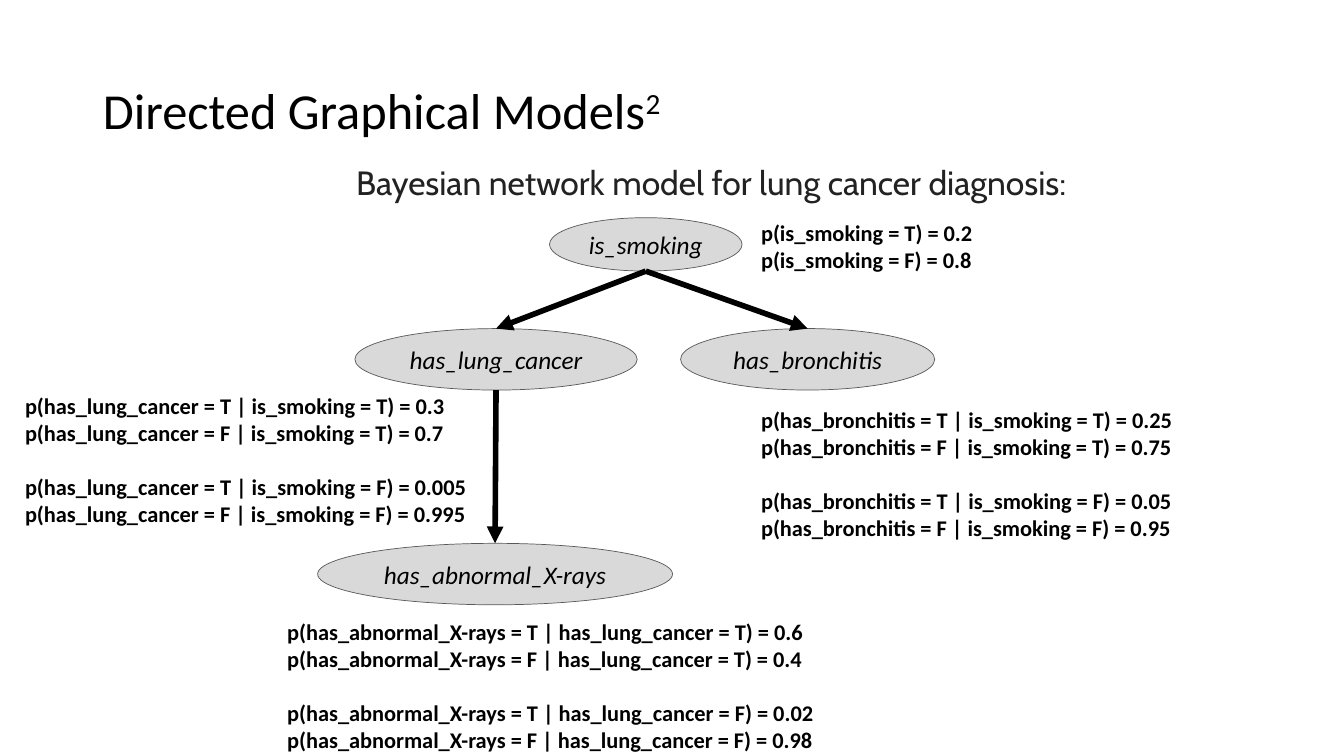
from lxml import etree
from pptx import Presentation, util as u
from pptx.dml.color import RGBColor
from pptx.enum import shapes, text
from pptx.oxml.ns import qn


def paint(code):
    return RGBColor.from_string(code)


def write(para, words, size, font="Calibri", color="000000", bold=False, italic=False, raised=0):
    run = para.add_run()
    run.text = words
    style = run.font
    style.name, style.size = font, u.Pt(size)
    style.bold, style.italic = bold, italic
    style.color.rgb = paint(color)
    if raised:
        run._r.get_or_add_rPr().set("baseline", str(raised * 1000))


class Board:
    fill, edge, ink = "D9D9D9", "595959", "000000"

    def __init__(self, deck):
        self.slide = deck.slides.add_slide(deck.slide_layouts[1])
        self.shapes = self.slide.shapes

    def place(self, holder, left, top, width, height, anchor):
        holder.left, holder.top = u.Inches(left), u.Inches(top)
        holder.width, holder.height = u.Inches(width), u.Inches(height)
        frame = holder.text_frame
        frame.word_wrap = True
        frame.auto_size = text.MSO_AUTO_SIZE.NONE
        frame.vertical_anchor = anchor
        para = frame.paragraphs[0]
        para.line_spacing = 0.9
        return para

    def title(self, words, note):
        para = self.place(self.shapes.title, 0.92, 0.4, 11.5, 1.45, text.MSO_ANCHOR.MIDDLE)
        para.alignment = text.PP_ALIGN.LEFT
        write(para, words, 36)
        write(para, note, 36, raised=30)

    def body(self, words):
        para = self.place(self.slide.placeholders[1], 0.92, 1.6, 11.77, 5.5, text.MSO_ANCHOR.TOP)
        para.level = 1
        para.alignment = text.PP_ALIGN.CENTER
        para.space_before = u.Pt(5)
        props = para._p.get_or_add_pPr()
        props.set("marL", str(u.Inches(0.5)))
        props.set("indent", "0")
        etree.SubElement(props, qn("a:buNone"))
        write(para, words, 24, font="Cabin", color="222222")

    def node(self, name, left, top, width, height):
        oval = self.shapes.add_shape(
            shapes.MSO_SHAPE.OVAL, u.Inches(left), u.Inches(top), u.Inches(width), u.Inches(height))
        oval.shadow.inherit = False
        oval.fill.solid()
        oval.fill.fore_color.rgb = paint(self.fill)
        oval.line.color.rgb = paint(self.edge)
        oval.line.width = u.Pt(0.5)
        frame = oval.text_frame
        frame.word_wrap = False
        frame.vertical_anchor = text.MSO_ANCHOR.MIDDLE
        para = frame.paragraphs[0]
        para.alignment = text.PP_ALIGN.CENTER
        write(para, name, 18, italic=True)
        return oval

    def arrow(self, start, end):
        line = self.shapes.add_connector(
            shapes.MSO_CONNECTOR.STRAIGHT,
            start.left + start.width // 2, start.top + start.height,
            end.left + end.width // 2, end.top)
        line.line.color.rgb = paint(self.ink)
        line.line.width = u.Pt(4)
        props = line._element.spPr
        etree.SubElement(props.find(qn("a:ln")), qn("a:tailEnd"), type="triangle")
        etree.SubElement(props, qn("a:effectLst"))

    def odds(self, left, top, width, height, groups):
        box = self.shapes.add_textbox(u.Inches(left), u.Inches(top), u.Inches(width), u.Inches(height))
        frame = box.text_frame
        frame.word_wrap = True
        for i, group in enumerate(groups):
            for j, words in enumerate(group):
                para = frame.paragraphs[0] if i == j == 0 else frame.add_paragraph()
                if i and j == 0:
                    para.space_before = u.Pt(19.5)
                write(para, words, 16, bold=True)


def table(name, cause, *pairs):
    groups = []
    for state, pair in zip("TF", pairs):
        given = f" | {cause} = {state}" if cause else ""
        groups.append([f"p({name} = {value}{given}) = {odd}" for value, odd in zip("TF", pair)])
    return groups


def main():
    deck = Presentation()
    deck.slide_width, deck.slide_height = u.Inches(13.33), u.Inches(7.5)
    board = Board(deck)
    board.title("Directed Graphical Models", "2")
    board.body("Bayesian network model for lung cancer diagnosis:")

    smoke, lung, bronch, xray = "is_smoking", "has_lung_cancer", "has_bronchitis", "has_abnormal_X-rays"
    spots = {
        smoke: (5.45, 2.16, 1.91, 0.53),
        lung: (3.52, 3.26, 2.8, 0.61),
        bronch: (6.75, 3.26, 2.52, 0.61),
        xray: (3.15, 5.39, 3.52, 0.61),
    }
    nodes = {name: board.node(name, *spot) for name, spot in spots.items()}
    for cause, effect in ((smoke, lung), (smoke, bronch), (lung, xray)):
        board.arrow(nodes[cause], nodes[effect])

    board.odds(7.45, 2.13, 2.8, 0.64, table(smoke, None, ("0.2", "0.8")))
    board.odds(7.45, 3.98, 4.37, 1.45, table(bronch, smoke, ("0.25", "0.75"), ("0.05", "0.95")))
    board.odds(0.15, 3.84, 4.86, 1.45, table(lung, smoke, ("0.3", "0.7"), ("0.005", "0.995")))
    board.odds(2.75, 6.08, 5.88, 1.45, table(xray, lung, ("0.6", "0.4"), ("0.02", "0.98")))
    deck.save("out.pptx")


if __name__ == "__main__":
    main()
